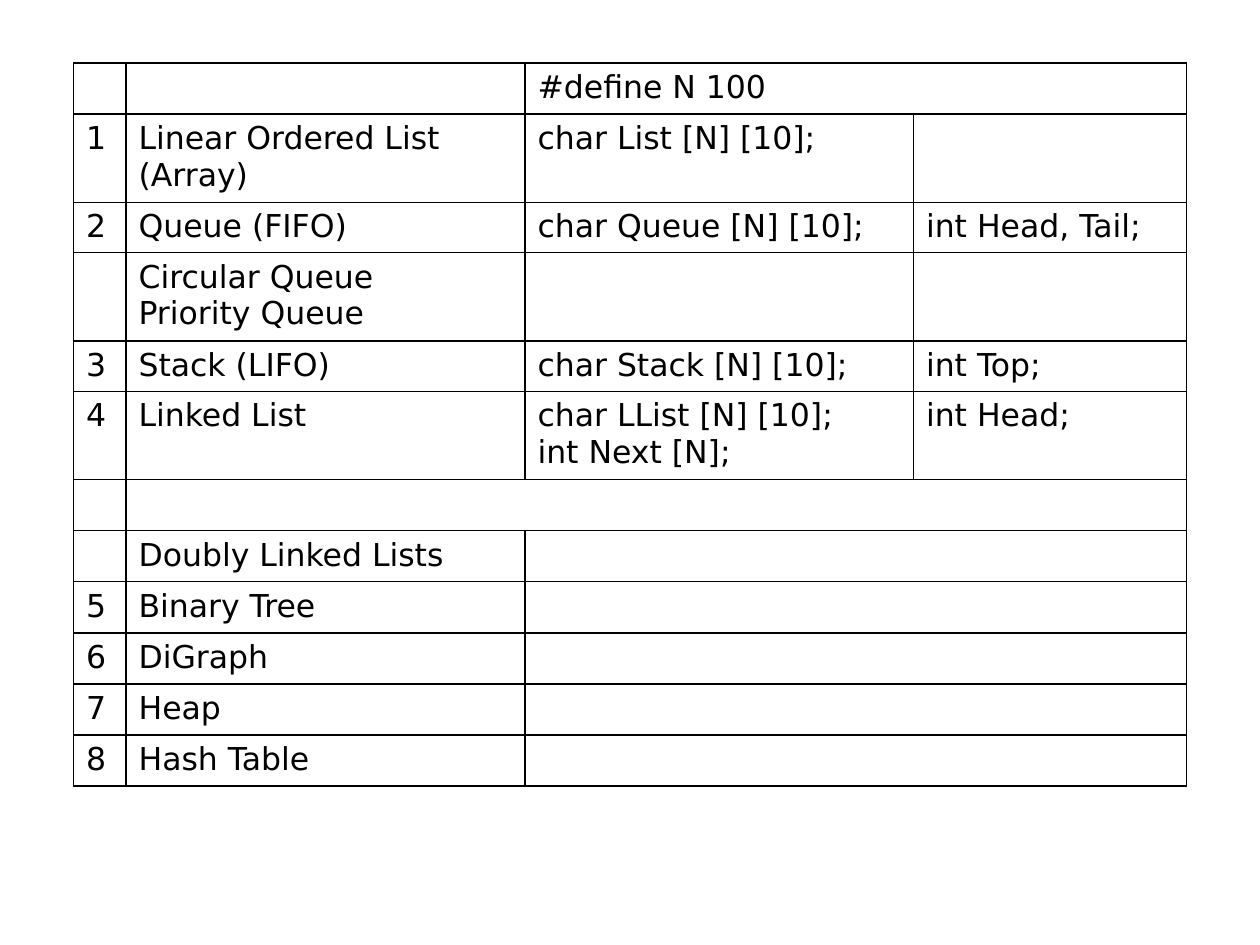
import dataclasses

import lxml.etree
import pptx
import pptx.dml.color
import pptx.oxml.ns
import pptx.util

Pt = pptx.util.Pt


@dataclasses.dataclass
class Theme:
    font: str = "DejaVu Sans"
    text_size: float = 18
    ink: str = "000000"
    border: float = 1
    thin_border: float = 0.75


class SlideBuilder:
    def __init__(self, slide, theme):
        self.slide = slide
        self.theme = theme

    def add_table(self, left, top, widths, heights, rows):
        """Add a ruled table; a row's last entry spans the columns left over."""
        frame = self.slide.shapes.add_table(
            len(rows), len(widths), Pt(left), Pt(top), Pt(sum(widths)), Pt(sum(heights)))
        table = frame.table
        table.first_row = False
        table.horz_banding = False
        for column, width in zip(table.columns, widths):
            column.width = Pt(width)
        last = len(widths) - 1
        for row_index, (texts, height) in enumerate(zip(rows, heights)):
            table.rows[row_index].height = Pt(height)
            for column_index in range(len(widths)):
                self.rule_cell(table.cell(row_index, column_index),
                               thin_left=column_index == last,
                               thin_right=column_index == last - 1 and len(texts) > last)
            for column_index, text in enumerate(texts):
                self.write_cell(table.cell(row_index, column_index), text)
            if len(texts) <= last:
                table.cell(row_index, len(texts) - 1).merge(table.cell(row_index, last))

    def rule_cell(self, cell, thin_left, thin_right):
        properties = cell._tc.get_or_add_tcPr()
        thin_sides = {"lnL": thin_left, "lnR": thin_right}
        for side in ("lnL", "lnR", "lnT", "lnB"):
            width = self.theme.thin_border if thin_sides.get(side) else self.theme.border
            line = lxml.etree.SubElement(properties, pptx.oxml.ns.qn(f"a:{side}"), w=str(Pt(width)))
            fill = lxml.etree.SubElement(line, pptx.oxml.ns.qn("a:solidFill"))
            lxml.etree.SubElement(fill, pptx.oxml.ns.qn("a:srgbClr"), val=self.theme.ink)
        cell.fill.background()

    def write_cell(self, cell, text):
        cell.text_frame.text = text
        for paragraph in cell.text_frame.paragraphs:
            for run in paragraph.runs:
                run.font.name = self.theme.font
                run.font.size = Pt(self.theme.text_size)
                run.font.color.rgb = pptx.dml.color.RGBColor.from_string(self.theme.ink)


STRUCTURES = [
    ("", "", "#define N 100"),
    ("1", "Linear Ordered List (Array)", "char List [N] [10];", ""),
    ("2", "Queue (FIFO)", "char Queue [N] [10];", "int Head, Tail;"),
    ("", "Circular Queue\nPriority Queue", "", ""),
    ("3", "Stack (LIFO)", "char Stack [N] [10];", "int Top;"),
    ("4", "Linked List", "char LList [N] [10];\nint Next [N];", "int Head;"),
    ("", ""),
    ("", "Doubly Linked Lists", ""),
    ("5", "Binary Tree", ""),
    ("6", "DiGraph", ""),
    ("7", "Heap", ""),
    ("8", "Hash Table", ""),
]
TWO_LINE_ROWS = {1, 3, 5}
COLUMN_WIDTHS = [30, 228, 222, 156]


def main():
    presentation = pptx.Presentation()
    presentation.slide_width = Pt(720)
    presentation.slide_height = Pt(540)
    slide = presentation.slides.add_slide(presentation.slide_layouts[6])
    heights = [50.4 if index in TWO_LINE_ROWS else 28.8 for index in range(len(STRUCTURES))]
    SlideBuilder(slide, Theme()).add_table(42, 36, COLUMN_WIDTHS, heights, STRUCTURES)
    presentation.save("out.pptx")


if __name__ == "__main__":
    main()
